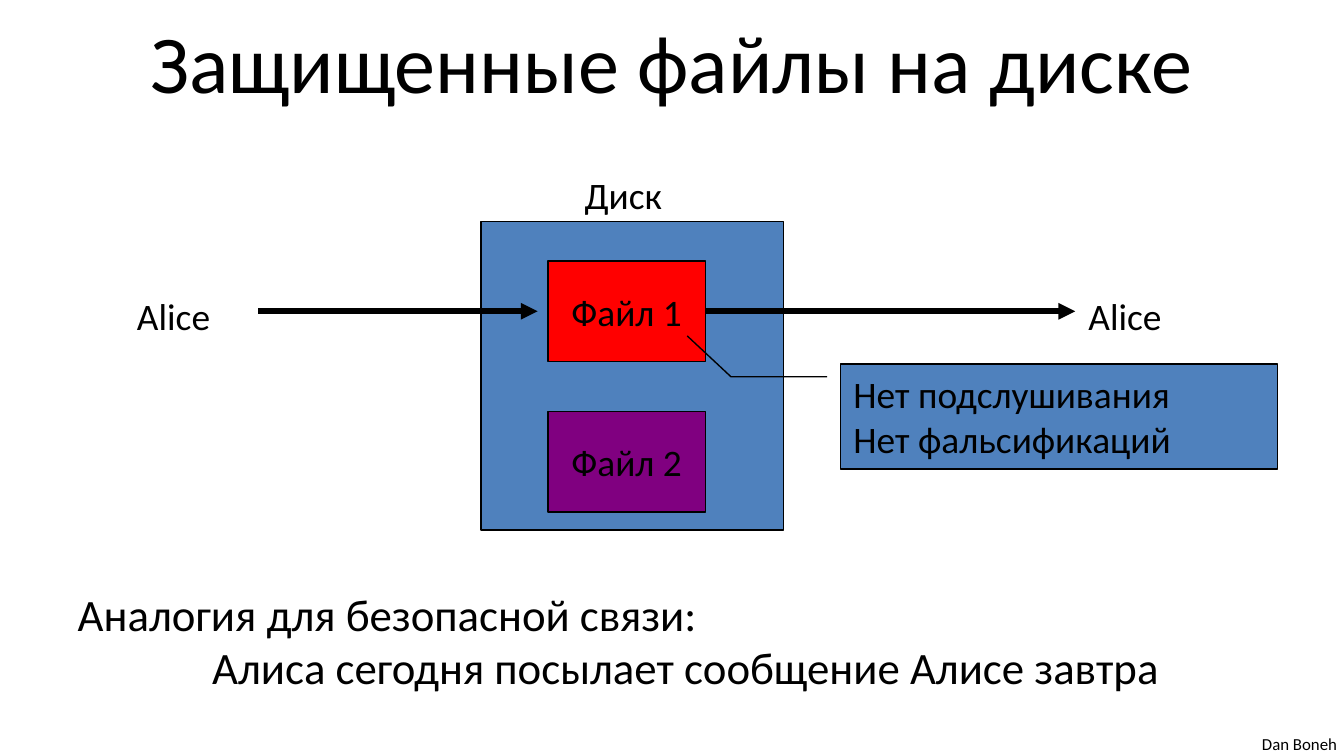
from lxml.etree import SubElement
from pptx import Presentation
from pptx.dml.color import RGBColor
from pptx.enum.shapes import MSO_CONNECTOR, MSO_SHAPE
from pptx.enum.text import MSO_ANCHOR as Anchor, PP_ALIGN as Align
from pptx.oxml.ns import qn
from pptx.util import Cm, Pt

BLACK = "000000"
BLUE = "4F81BD"
RED = "FF0000"
PURPLE = "800080"


def color(hex_code):
    return RGBColor.from_string(hex_code)


def write(shape, text, size=20, align=Align.LEFT, anchor=Anchor.TOP, wrap=True):
    frame = shape.text_frame
    frame.text = text
    frame.word_wrap = wrap
    frame.vertical_anchor = anchor
    for paragraph in frame.paragraphs:
        paragraph.alignment = align
        for run in paragraph.runs:
            run.font.name = "Calibri"
            run.font.size = Pt(size)
            run.font.color.rgb = color(BLACK)


def add_label(slide, text, left, top, width, height, size=20, wrap=True):
    label = slide.shapes.add_textbox(Cm(left), Cm(top), Cm(width), Cm(height))
    write(label, text, size, wrap=wrap)
    return label


def add_box(slide, fill, left, top, width, height, preset=MSO_SHAPE.RECTANGLE):
    box = slide.shapes.add_shape(preset, Cm(left), Cm(top), Cm(width), Cm(height))
    box.shadow.inherit = False
    box.fill.solid()
    box.fill.fore_color.rgb = color(fill)
    box.line.color.rgb = color(BLACK)
    box.line.width = Pt(0.75)
    return box


def add_file(slide, text, fill, top):
    file_box = add_box(slide, fill, 10.36, top, 2.97, 1.9)
    write(file_box, text, align=Align.CENTER, anchor=Anchor.MIDDLE, wrap=False)
    return file_box


def add_arrow(slide, start, end, y):
    arrow = slide.shapes.add_connector(
        MSO_CONNECTOR.STRAIGHT, Cm(start), Cm(y), Cm(end), Cm(y))
    arrow.line.color.rgb = color(BLACK)
    arrow.line.width = Pt(3)
    SubElement(arrow.line._get_or_add_ln(), qn("a:tailEnd"), type="triangle")
    SubElement(arrow._element.spPr, qn("a:effectLst"))
    return arrow


def add_callout(slide, text):
    callout = add_box(slide, BLUE, 15.88, 6.88, 8.26, 1.98, MSO_SHAPE.LINE_CALLOUT_2)
    for index, value in enumerate((0.12, -0.03, 0.12, -0.25, -0.27, -0.35)):
        callout.adjustments[index] = value
    write(callout, text)


def add_title(slide, text):
    title = slide.shapes.title
    title.left, title.top, title.width, title.height = Cm(1.27), Cm(-0.05), Cm(22.86), Cm(2.39)
    write(title, text, 44, Align.CENTER, Anchor.MIDDLE)


def main():
    deck = Presentation()
    deck.slide_width, deck.slide_height = Cm(25.4), Cm(14.28)
    slide = deck.slides.add_slide(deck.slide_layouts[5])

    add_label(slide, "Dan Boneh", 23.6, 13.74, 1.93, 0.64, size=9, wrap=False)
    add_title(slide, "Защищенные файлы на диске")

    add_box(slide, BLUE, 9.09, 4.19, 5.72, 5.82)
    add_label(slide, "Диск", 10.8, 3.12, 2.18, 1.12)
    first_file = add_file(slide, "Файл 1", RED, 4.93)
    add_file(slide, "Файл 2", PURPLE, 7.77)

    add_arrow(slide, 4.88, 10.16, 5.88)
    reading = add_arrow(slide, 13.33, 20.32, 5.88)
    reading.begin_connect(first_file, 3)
    for left in (2.34, 20.32):
        add_label(slide, "Alice", left, 5.41, 2.36, 1.12)

    add_callout(slide, "Нет подслушивания\nНет фальсификаций")

    analogy = add_label(
        slide,
        "Аналогия для безопасной связи:\nАлиса сегодня посылает сообщение Алисе завтра",
        1.22, 10.95, 23.57, 2.31, size=24)
    message = analogy.text_frame.paragraphs[1]
    message._p.get_or_add_pPr().set("marL", str(Cm(2.54)))

    deck.save("out.pptx")


if __name__ == "__main__":
    main()
